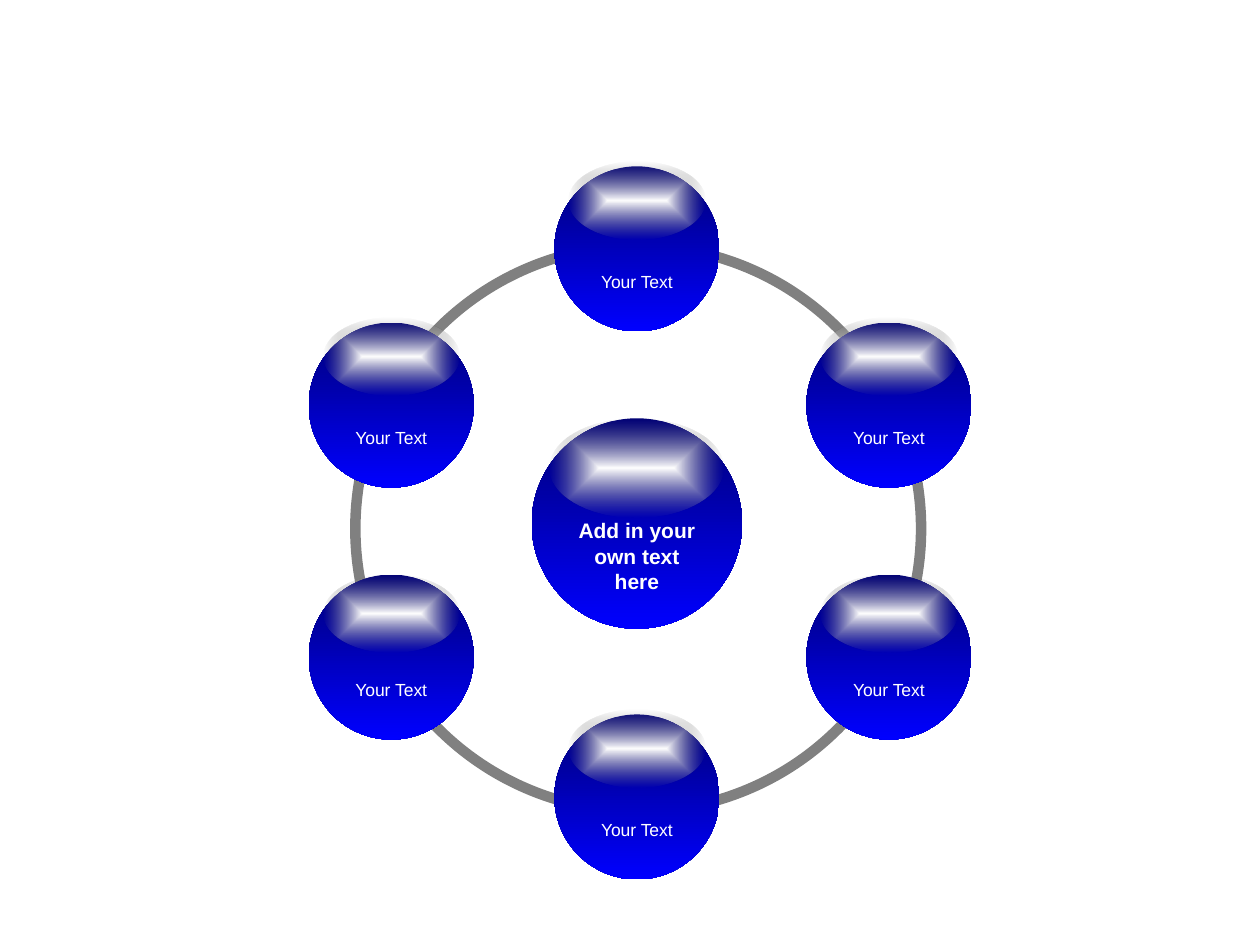
import pptx
import pptx.util
import pptx.oxml
import pptx.oxml.ns
import pptx.dml.color
import pptx.enum.shapes
import pptx.enum.text

Inches, Pt = pptx.util.Inches, pptx.util.Pt
RGB = pptx.dml.color.RGBColor.from_string

# Content: text, left, top, lift of the gloss above the ball
HUB = ("Add in your own text here", 4.22, 3.32)
LEFT, MID, RIGHT = 2.45, 4.4, 6.4
BALLS = [
    ("Your Text", LEFT, 2.56, 0.04),
    ("Your Text", LEFT, 4.56, 0),
    ("Your Text", MID, 5.67, 0.04),
    ("Your Text", RIGHT, 4.56, 0),
    ("Your Text", RIGHT, 2.56, 0.04),
    ("Your Text", MID, 1.32, 0.04),
]
COLORS = {"dark": "000076", "blue": "0000FF", "white": "FFFFFF",
          "gray": "767676", "ring": "808080"}
HUB_SIZE, BALL_SIZE = 1.67, 1.31
HUB_GLOSS, BALL_GLOSS = (1.38, 0.79), (1.08, 0.62)
DOWN = '<a:lin ang="5400000" scaled="1"/>'
INWARD = ('<a:path path="shape"><a:fillToRect l="50000" t="50000" '
          'r="50000" b="50000"/></a:path>')

prs = pptx.Presentation()
prs.slide_width, prs.slide_height = Inches(10), Inches(7.5)
slide = prs.slides.add_slide(prs.slide_layouts[6])


def add_oval(x, y, w, h):
    oval = slide.shapes.add_shape(
        pptx.enum.shapes.MSO_SHAPE.OVAL, *map(Inches, (x, y, w, h)))
    oval.shadow.inherit = False
    oval.fill.background()
    oval.line.fill.background()
    return oval


def set_grad(oval, start, end, course, fade=""):
    grad = pptx.oxml.parse_xml(
        f'<a:gradFill {pptx.oxml.ns.nsdecls("a")} rotWithShape="1"><a:gsLst>'
        f'<a:gs pos="0"><a:srgbClr val="{COLORS[start]}"/></a:gs>'
        f'<a:gs pos="100000"><a:srgbClr val="{COLORS[end]}">{fade}</a:srgbClr>'
        f'</a:gs></a:gsLst>{course}</a:gradFill>')
    props = oval.element.spPr
    props.replace(props.find(pptx.oxml.ns.qn("a:noFill")), grad)


def add_ball(text, x, y, size, gloss, lift, points, bold):
    ball = add_oval(x, y, size, size)
    set_grad(ball, "dark", "blue", DOWN)
    frame = ball.text_frame
    frame.word_wrap = True
    frame.vertical_anchor = pptx.enum.text.MSO_ANCHOR.MIDDLE
    frame.margin_left = frame.margin_right = Inches(0.1)
    frame.margin_top, frame.margin_bottom = Inches(0.56), Inches(0.05)
    frame.text = text
    para = frame.paragraphs[0]
    para.alignment = pptx.enum.text.PP_ALIGN.CENTER
    font = para.runs[0].font
    font.name, font.size, font.bold = "Arial", Pt(points), bold
    font.color.rgb = RGB(COLORS["white"])

    # Highlight, centred across the ball
    wide, high = gloss
    shine = add_oval(x + (size - wide) / 2, y - lift, wide, high)
    set_grad(shine, "white", "gray", INWARD, '<a:alpha val="0"/>')


# Hub
add_ball(*HUB, HUB_SIZE, HUB_GLOSS, 0, 12, True)

# Ring
ring = add_oval(2.82, 1.95, 4.49, 4.49)
ring.line.color.rgb = RGB(COLORS["ring"])
ring.line.width = Pt(6)

# Balls on the ring
for text, x, y, lift in BALLS:
    add_ball(text, x, y, BALL_SIZE, BALL_GLOSS, lift, 10, False)

prs.save("out.pptx")
